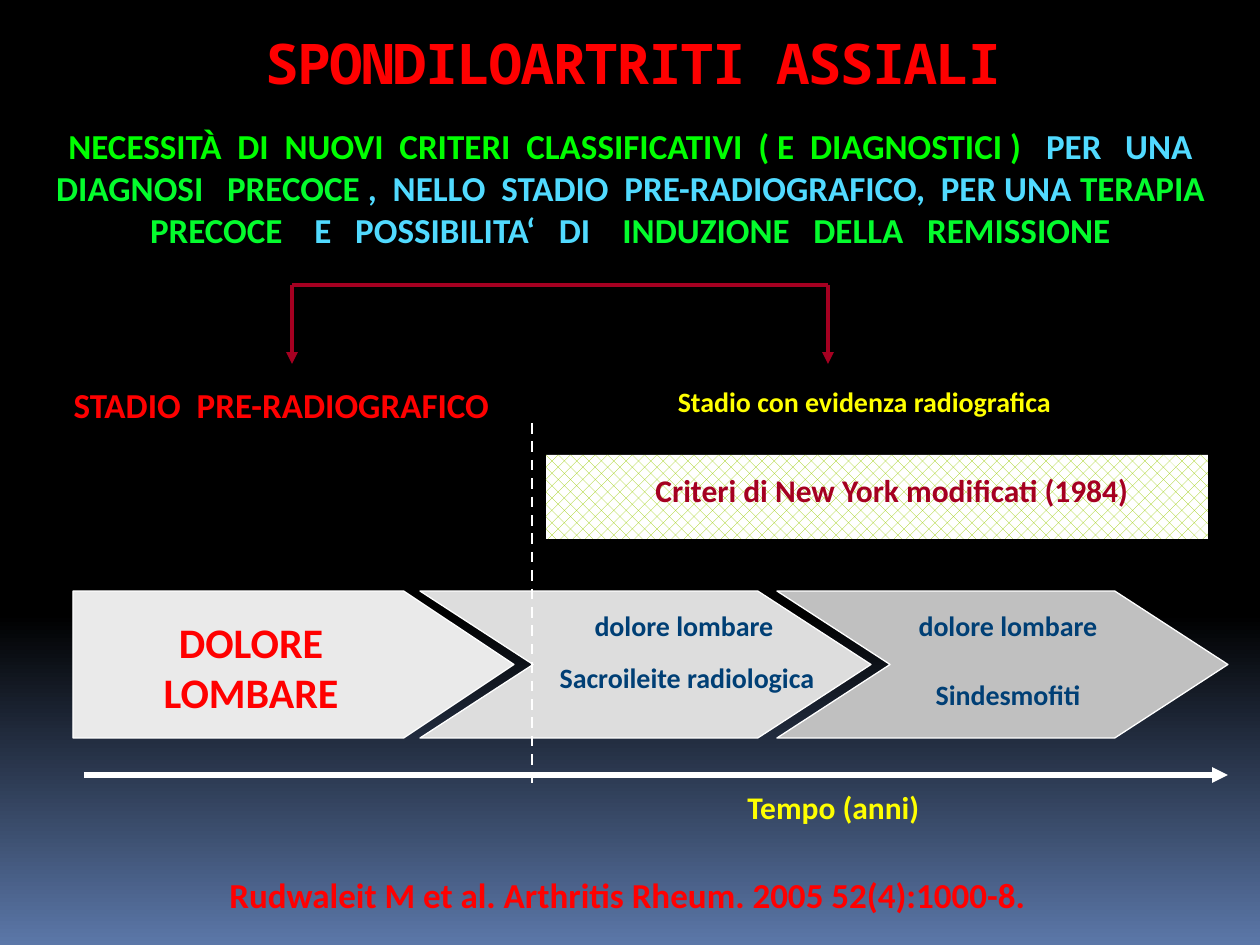
import pptx
import pptx.util
import pptx.dml.color
import pptx.enum.dml
import pptx.enum.shapes
import pptx.enum.text
import pptx.oxml.ns
import lxml.etree

PX = 914400 / 126
THEME = {
    "font": "Calibri", "title_font": "Noto Sans Mono",
    "title": 32, "stage": 24, "heading": 20, "label": 18, "small": 16,
    "black": "000000", "dusk": "5B77A8", "white": "FFFFFF", "red": "FF0000",
    "yellow": "FFFF00", "navy": "003F75", "crimson": "A50021",
    "lime": "00FF00", "green": "04FC2D", "cyan": "51DAFF", "hatch": "99CC00",
    "steps": ["EAEAEA", "DDDDDD", "C0C0C0"],
}
RGB = pptx.dml.color.RGBColor.from_string
ALIGN = pptx.enum.text.PP_ALIGN
SHAPE = pptx.enum.shapes.MSO_SHAPE


def add_text(slide, frame, spans, size, align=ALIGN.CENTER, font="font"):
    box = slide.shapes.add_textbox(*[round(v * PX) for v in frame])
    box.text_frame.word_wrap = True
    box.text_frame.auto_size = pptx.enum.text.MSO_AUTO_SIZE.SHAPE_TO_FIT_TEXT
    para = box.text_frame.paragraphs[0]
    para.alignment = align
    para.font.name = THEME[font]
    para.font.size = pptx.util.Pt(THEME[size])
    para.font.bold = True
    for number, (words, color) in enumerate(spans):
        for index, line in enumerate(words.split("\n")):
            if index:
                para.add_line_break()
            span = para.add_run()
            span.text = line
            span.font.name = THEME[font]
            span.font.size = pptx.util.Pt(THEME[size])
            span.font.bold = True
            span.font.color.rgb = RGB(THEME[color])
    return box


def add_line(slide, ends, color, width, arrow=False, dashed=False):
    line = slide.shapes.add_connector(
        pptx.enum.shapes.MSO_CONNECTOR.STRAIGHT, *[round(v * PX) for v in ends])
    line.line.color.rgb = RGB(THEME[color])
    line.line.width = pptx.util.Pt(width)
    if dashed:
        line.line.dash_style = pptx.enum.dml.MSO_LINE.DASH
    if arrow:
        outline = line.line._get_or_add_ln()
        lxml.etree.SubElement(outline, pptx.oxml.ns.qn("a:tailEnd"), type="triangle")
    lxml.etree.SubElement(line._element.spPr, pptx.oxml.ns.qn("a:effectLst"))


deck = pptx.Presentation()
deck.slide_width = round(1260 * PX)
deck.slide_height = round(945 * PX)
slide = deck.slides.add_slide(deck.slide_layouts[6])

backdrop = slide.background.fill
backdrop.gradient()
backdrop.gradient_angle = 270
for stop, position, color in zip(backdrop.gradient_stops, (0.65, 1), ("black", "dusk")):
    stop.position = position
    stop.color.rgb = RGB(THEME[color])

steps = [
    (SHAPE.PENTAGON, 73, 441, 0.75),
    (SHAPE.CHEVRON, 420, 451, 0.77),
    (SHAPE.CHEVRON, 777, 451, 0.77),
]
for (kind, left, width, point), color in zip(steps, THEME["steps"]):
    step = slide.shapes.add_shape(
        kind, *[round(v * PX) for v in (left, 591, width, 147)])
    step.adjustments[0] = point
    step.shadow.inherit = False
    step.fill.solid()
    step.fill.fore_color.rgb = RGB(color)
    step.line.color.rgb = RGB(THEME["white"])
    step.line.width = pptx.util.Pt(0.75)

add_line(slide, (84, 775, 1228, 775), "white", 3, arrow=True)
add_text(slide, (735, 782, 242, 50), [("Tempo (anni)", "yellow")], "label", ALIGN.LEFT)
add_text(slide, (78, 610, 346, 115), [("DOLORE\nLOMBARE", "red")], "stage")

findings = [
    ("dolore lombare", 684, 602),
    ("Sacroileite radiologica", 687, 654),
    ("dolore lombare", 1008, 602),
    ("Sindesmofiti", 1008, 671),
]
for words, center, top in findings:
    add_text(slide, (center - 160, top, 320, 47), [(words, "navy")], "small")

add_line(slide, (532, 423, 532, 790), "white", 1.5, dashed=True)
add_text(slide, (630, 378, 469, 47),
         [("Stadio con evidenza radiografica", "yellow")], "small")
add_text(slide, (39, 377, 485, 55), [("STADIO  PRE-RADIOGRAFICO", "red")], "heading")

for x in (292, 828):
    add_line(slide, (x, 285, x, 364), "crimson", 2.25, arrow=True)
add_line(slide, (292, 285, 828, 285), "crimson", 2.25)

add_text(slide, (20, 118, 1221, 140), [
    ("NECESSITÀ  DI  NUOVI  CRITERI  CLASSIFICATIVI  ( E  DIAGNOSTICI )   ", "lime"),
    ("PER   UNA ", "cyan"),
    ("DIAGNOSI   PRECOCE ", "green"),
    (",  NELLO  STADIO  PRE-RADIOGRAFICO,  PER UNA ", "cyan"),
    ("TERAPIA PRECOCE", "green"),
    ("    E   POSSIBILITA‘   DI    ", "cyan"),
    ("INDUZIONE   DELLA   REMISSIONE", "green"),
], "heading")

criteria = slide.shapes.add_shape(
    SHAPE.RECTANGLE, *[round(v * PX) for v in (546, 455, 662, 84)])
criteria.shadow.inherit = False
criteria.line.fill.background()
criteria.fill.patterned()
criteria.fill.pattern = pptx.enum.dml.MSO_PATTERN.PERCENT_30
criteria.fill.fore_color.rgb = RGB(THEME["hatch"])
criteria.fill.back_color.rgb = RGB(THEME["white"])
add_text(slide, (608, 465, 568, 50),
         [("Criteri di New York modificati (1984)", "crimson")], "label")

add_text(slide, (217, 867, 906, 55),
         [("Rudwaleit M et al. Arthritis Rheum. 2005 52(4):1000-8.", "red")],
         "heading", ALIGN.LEFT)

title = add_text(slide, (69, 29, 1128, 88), [("SPONDILOARTRITI ASSIALI", "red")],
                 "title", font="title_font")
title.text_frame.auto_size = pptx.enum.text.MSO_AUTO_SIZE.NONE
title.text_frame.margin_left = title.text_frame.margin_right = 0
title.text_frame.margin_top = title.text_frame.margin_bottom = 0
title.text_frame.paragraphs[0].runs[0].font._element.set("spc", "-100")

deck.save("out.pptx")
